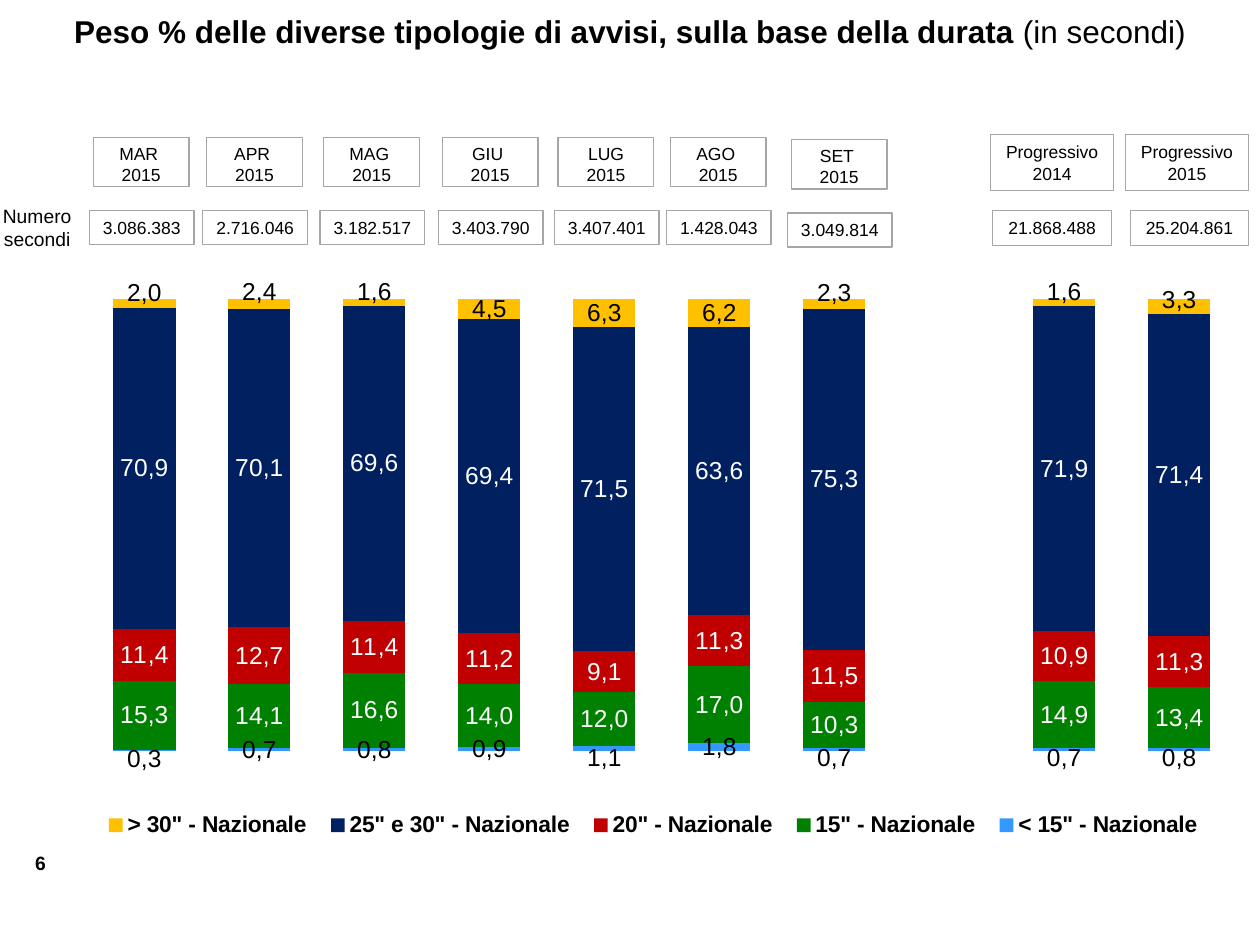
from dataclasses import dataclass

import pptx
import pptx.chart.data
import pptx.dml.color
import pptx.enum.chart
import pptx.enum.shapes
import pptx.enum.text
import pptx.oxml
import pptx.oxml.ns
import pptx.util
from pptx.util import Inches, Pt

RGBColor = pptx.dml.color.RGBColor
BLACK = RGBColor(0, 0, 0)
WHITE = RGBColor(255, 255, 255)
GREY = RGBColor(0xA6, 0xA6, 0xA6)
BLUE = RGBColor(0x33, 0x99, 0xFF)
GREEN = RGBColor(0, 0x80, 0)
RED = RGBColor(0xC0, 0, 0)
NAVY = RGBColor(0, 0x20, 0x60)
GOLD = RGBColor(0xFF, 0xC0, 0)
FACE = "Arial"
CENTER = pptx.enum.text.PP_ALIGN.CENTER
TOP = pptx.enum.text.MSO_ANCHOR.TOP
MIDDLE = pptx.enum.text.MSO_ANCHOR.MIDDLE


@dataclass
class Month:
    name: str
    count: str
    left: float
    drop: float = 0


@dataclass
class Total:
    name: str
    count: str
    left: float
    inset: float


@dataclass
class Band:
    name: str
    color: RGBColor
    ink: RGBColor
    vals: tuple
    shifts: tuple = (0,) * 10  # label offsets, as shares of the chart height


MONTHS = [
    Month("MAR \n2015", "3.086.383", 0.71),
    Month("APR \n2015", "2.716.046", 1.61),
    Month("MAG \n2015", "3.182.517", 2.54),
    Month("GIU \n2015", "3.403.790", 3.48),
    Month("LUG\n2015", "3.407.401", 4.4),
    Month("AGO \n2015", "1.428.043", 5.29),
    Month("SET \n2015", "3.049.814", 6.25, 0.02),
]
TOTALS = [
    Total("Progressivo 2014", "21.868.488", 7.86, 0.02),
    Total("Progressivo 2015", "25.204.861", 8.93, 0.04),
]
# Shares by spot length; the eighth column is a gap
BANDS = [
    Band('< 15" - Nazionale', BLUE, BLACK,
         (0.003, 0.007, 0.008, 0.009, 0.011, 0.018, 0.007, None, 0.007, 0.008),
         (0.014, 0, 0, 0, 0.016, 0, 0.014, 0, 0.014, 0.014)),
    Band('15" - Nazionale', GREEN, WHITE,
         (0.153, 0.141, 0.166, 0.14, 0.12, 0.17, 0.103, None, 0.149, 0.134)),
    Band('20" - Nazionale', RED, WHITE,
         (0.114, 0.127, 0.114, 0.112, 0.091, 0.113, 0.115, None, 0.109, 0.113)),
    Band('25" e 30" - Nazionale', NAVY, WHITE,
         (0.709, 0.701, 0.696, 0.694, 0.715, 0.636, 0.753, None, 0.719, 0.714)),
    Band('> 30" - Nazionale', GOLD, BLACK,
         (0.02, 0.024, 0.016, 0.045, 0.063, 0.062, 0.023, None, 0.016, 0.033),
         (-0.018, -0.02, -0.018, 0, 0, 0, -0.018, 0, -0.018, -0.01)),
]


def style(font, size: float, color: RGBColor = BLACK, bold: bool = False) -> None:
    font.name, font.size, font.bold = FACE, Pt(size), bold
    font.color.rgb = color


def add_text(slide, text: str, left: float, top: float, width: float,
             height: float, size: float, bold: bool = False):
    box = slide.shapes.add_textbox(
        Inches(left), Inches(top), Inches(width), Inches(height))
    frame = box.text_frame
    frame.word_wrap = True
    frame.text = text
    style(frame.paragraphs[0].font, size, BLACK, bold)
    return frame


def add_box(slide, text: str, left: float, top: float, width: float,
            height: float, anchor=MIDDLE, inset: float = 0.05,
            wrap: bool = True) -> None:
    box = slide.shapes.add_shape(
        pptx.enum.shapes.MSO_SHAPE.RECTANGLE,
        Inches(left), Inches(top), Inches(width), Inches(height))
    box.shadow.inherit = False
    box.fill.background()
    box.line.color.rgb = GREY
    box.line.width = Pt(0.75)
    frame = box.text_frame
    frame.word_wrap = wrap
    frame.vertical_anchor = anchor
    frame.margin_top = Inches(inset)
    frame.text = text
    for para in frame.paragraphs:
        para.alignment = CENTER
        style(para.font, 10)


def make_layout(edge: bool = False, inner: bool = False, **parts: float):
    """Manual layout; the parts are shares of the chart size."""
    tags = '<c:layoutTarget val="inner"/>' if inner else ""
    if edge:
        tags += '<c:xMode val="edge"/><c:yMode val="edge"/>'
    tags += "".join(f'<c:{key} val="{val}"/>' for key, val in parts.items())
    space = pptx.oxml.ns.nsdecls("c")
    return pptx.oxml.parse_xml(
        f"<c:layout {space}><c:manualLayout>{tags}</c:manualLayout></c:layout>")


def set_layout(node, layout, index: int) -> None:
    for old in node.findall(pptx.oxml.ns.qn("c:layout")):
        node.remove(old)
    node.insert(index, layout)


def paint(series, band: Band) -> None:
    series.format.fill.solid()
    series.format.fill.fore_color.rgb = band.color
    labels = series.data_labels
    labels.show_value = True
    labels.number_format = "0.0%"
    labels.number_format_is_linked = False
    style(labels.font, 14, band.ink)
    for i, (val, shift) in enumerate(zip(band.vals, band.shifts)):
        if val is None:
            continue
        label = series.points[i].data_label
        run = label.text_frame.paragraphs[0].add_run()
        run.text = f"{val * 100:.1f}".replace(".", ",")
        style(run.font, 14, band.ink)
        if shift:
            node = labels._element.xpath(f'c:dLbl[c:idx/@val="{i}"]')[0]
            set_layout(node, make_layout(x=0, y=shift), 1)


def add_bars(slide) -> None:
    data = pptx.chart.data.CategoryChartData(number_format="0.0%")
    data.categories = [str(n) for n in range(1, 11)]
    for band in BANDS:
        data.add_series(band.name, band.vals)
    kinds = pptx.enum.chart
    chart = slide.shapes.add_chart(
        kinds.XL_CHART_TYPE.COLUMN_STACKED_100, Inches(0.54), Inches(2.18),
        Inches(9.38), Inches(4.65), data).chart
    style(chart.font, 14, BLACK, True)
    chart.has_title = False
    chart.category_axis.visible = False
    chart.value_axis.visible = False
    chart.value_axis.has_major_gridlines = False
    chart.value_axis.maximum_scale = 1
    plot = chart.plots[0]
    plot.gap_width, plot.overlap = 85, 100
    plot.vary_by_categories = False
    for series, band in zip(plot.series, BANDS):
        paint(series, band)
    area = chart._chartSpace.chart.plotArea
    set_layout(area, make_layout(True, True, x=0.016, y=0.041, w=0.973, h=0.773), 0)

    # Legend in one row below the bars
    chart.has_legend = True
    legend = chart.legend
    legend.position = kinds.XL_LEGEND_POSITION.RIGHT
    legend.include_in_layout = False
    style(legend.font, 13, BLACK, True)
    set_layout(legend._element, make_layout(True, x=0.02, y=0.9, w=0.95, h=0.08), 1)


def main() -> None:
    deck = pptx.Presentation()
    deck.slide_width, deck.slide_height = Inches(10), Inches(7.5)
    slide = deck.slides.add_slide(deck.slide_layouts[6])

    # Page number and title
    add_text(slide, "6", 0.18, 6.71, 0.42, 0.29, 11, True).word_wrap = False
    title = add_text(slide, "", 0, 0.05, 10, 0.4, 18).paragraphs[0]
    title.alignment = CENTER
    lead = title.add_run()
    lead.text = "Peso % delle diverse tipologie di avvisi, sulla base della durata"
    lead.font.bold = True
    tail = title.add_run()
    tail.text = " (in secondi)"
    for run in (lead, tail):
        style(run.font, 18, BLACK, run is lead)

    # Column heads and seconds
    note = add_text(slide, "Numero secondi", -0.08, 1.57, 0.75, 0.47, 11)
    note.paragraphs[0].alignment = CENTER
    for col in MONTHS:
        add_box(slide, col.name, col.left + 0.03, 1.09 + col.drop, 0.76, 0.39,
                inset=0.08)
        add_box(slide, col.count, col.left, 1.67 + col.drop, 0.83, 0.27, TOP,
                wrap=False)
    for col in TOTALS:
        add_box(slide, col.name, col.left, 1.07, 0.98, 0.44)
        add_box(slide, col.count, col.left + col.inset, 1.67, 0.94, 0.28, TOP,
                wrap=False)

    add_bars(slide)
    deck.save("out.pptx")


if __name__ == "__main__":
    main()
